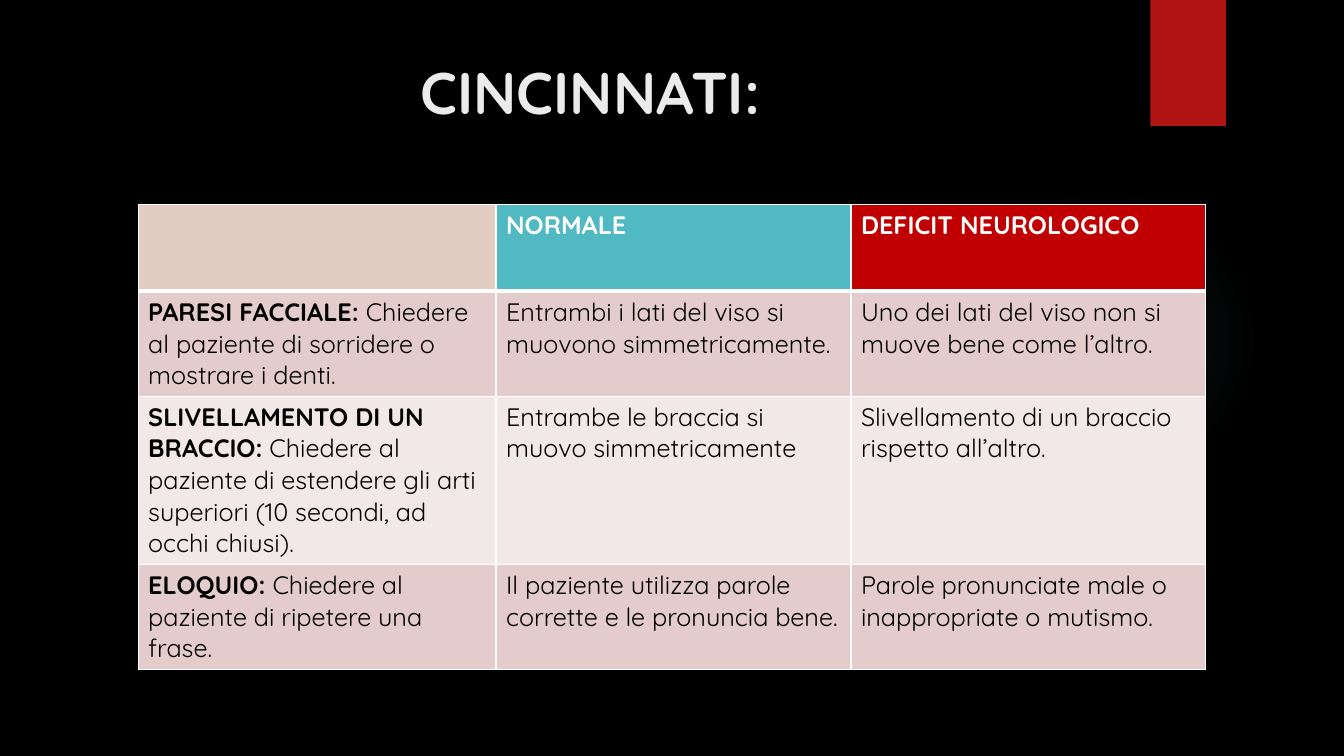
from pptx import Presentation
from pptx.dml.color import RGBColor
from pptx.enum.shapes import MSO_SHAPE
from pptx.enum.text import MSO_ANCHOR, PP_ALIGN
from pptx.oxml import parse_xml
from pptx.oxml.ns import nsdecls
from pptx.util import Inches, Pt

RECT, OVAL = MSO_SHAPE.RECTANGLE, MSO_SHAPE.OVAL
TOP, CENTER, LEFT = MSO_ANCHOR.TOP, PP_ALIGN.CENTER, PP_ALIGN.LEFT

FONT = "Quicksand"
BLACK, WHITE, TEAL = "000000", "FFFFFF", "50B9C1"
HEADERS = [("", "E2CDC3"), ("NORMALE", TEAL), ("DEFICIT NEUROLOGICO", "C00000")]
BANDS = ["E4CCCC", "F2E8E7"]
SIGNS = [
    ("PARESI FACCIALE: ", "Chiedere al paziente di sorridere o mostrare i denti.",
     "Entrambi i lati del viso si muovono simmetricamente.",
     "Uno dei lati del viso non si muove bene come l’altro."),
    ("SLIVELLAMENTO DI UN BRACCIO:",
     " Chiedere al paziente di estendere gli arti superiori (10 secondi, ad occhi chiusi).",
     "Entrambe le braccia si muovo simmetricamente",
     "Slivellamento di un braccio rispetto all’altro."),
    ("ELOQUIO: ", "Chiedere al paziente di ripetere una frase.",
     "Il paziente utilizza parole corrette e le pronuncia bene.",
     "Parole pronunciate male o inappropriate o mutismo."),
]
COL_WIDTHS = [3.55, 3.52, 3.52]
ROW_HEIGHTS = [0.86, 1.04, 1.67, 1.04]


def rgb(value):
    return RGBColor.from_string(value)


def add_text(tf, text, size=18, color=BLACK, bold=False, align=LEFT):
    """Append a formatted run to the first paragraph."""
    p = tf.paragraphs[0]
    p.alignment = align
    r = p.add_run()
    r.text = text
    r.font.name = FONT
    r.font.size = Pt(size)
    r.font.bold = bold
    r.font.color.rgb = rgb(color)


def add_plain_shape(slide, kind, box, color):
    sp = slide.shapes.add_shape(kind, *map(Inches, box))
    sp.shadow.inherit = False
    sp.fill.solid()
    sp.fill.fore_color.rgb = rgb(color)
    sp.line.fill.background()
    return sp


def add_glow(slide, box):
    """Draw a disc whose tint fades out from the centre."""
    sp = add_plain_shape(slide, OVAL, box, TEAL)
    stops = "".join(
        f'<a:gs pos="{pos * 1000}"><a:srgbClr val="{TEAL}">'
        f'<a:alpha val="{alpha * 1000}"/></a:srgbClr></a:gs>'
        for pos, alpha in [(0, 7), (36, 6), (69, 0), (100, 0)])
    gradient = parse_xml(
        f'<a:gradFill {nsdecls("a")} rotWithShape="1"><a:gsLst>{stops}</a:gsLst>'
        '<a:path path="circle"><a:fillToRect l="50000" t="50000" r="50000" b="50000"/>'
        '</a:path></a:gradFill>')
    solid = sp.fill._xPr.solidFill
    solid.getparent().replace(solid, gradient)


def add_title(slide, box, text):
    tf = slide.shapes.add_textbox(*map(Inches, box)).text_frame
    tf.word_wrap = True
    tf.vertical_anchor = TOP
    add_text(tf, text, size=42, color="EBEBEB", bold=True, align=CENTER)


def style_cell(cell, fill, bottom=1):
    """Set the borders (widths in points), then the fill."""
    tc_pr = cell._tc.get_or_add_tcPr()
    for side, width in zip("LRTB", (1, 1, 1, bottom)):
        tc_pr.append(parse_xml(
            f'<a:ln{side} {nsdecls("a")} w="{Pt(width)}"><a:solidFill>'
            f'<a:srgbClr val="{WHITE}"/></a:solidFill></a:ln{side}>'))
    cell.fill.solid()
    cell.fill.fore_color.rgb = rgb(fill)


def add_signs_table(slide, left, top):
    size = sum(COL_WIDTHS), sum(ROW_HEIGHTS)
    table = slide.shapes.add_table(len(ROW_HEIGHTS), len(COL_WIDTHS),
                                   *map(Inches, (left, top, *size))).table
    for column, width in zip(table.columns, COL_WIDTHS):
        column.width = Inches(width)
    for row, height in zip(table.rows, ROW_HEIGHTS):
        row.height = Inches(height)

    for col, (text, fill) in enumerate(HEADERS):
        cell = table.cell(0, col)
        style_cell(cell, fill, bottom=3)
        if text:
            add_text(cell.text_frame, text, color=WHITE, bold=True)

    for row, (sign, test, *findings) in enumerate(SIGNS, start=1):
        add_text(table.cell(row, 0).text_frame, sign, bold=True)
        for col, text in enumerate([test, *findings]):
            cell = table.cell(row, col)
            style_cell(cell, BANDS[(row - 1) % 2])
            add_text(cell.text_frame, text)


def main():
    prs = Presentation()
    prs.slide_width, prs.slide_height = Inches(13.33), Inches(7.5)
    slide = prs.slides.add_slide(prs.slide_layouts[6])
    slide.background.fill.solid()
    slide.background.fill.fore_color.rgb = rgb(BLACK)
    add_glow(slide, (9.41, 1.83, 3.08, 3.08))
    add_plain_shape(slide, RECT, (11.41, 0, 0.75, 1.25), "B01513")
    add_title(slide, (0.71, 0.5, 10.29, 1.53), "CINCINNATI:")
    add_signs_table(slide, 1.37, 2.03)
    prs.save("out.pptx")


if __name__ == "__main__":
    main()
